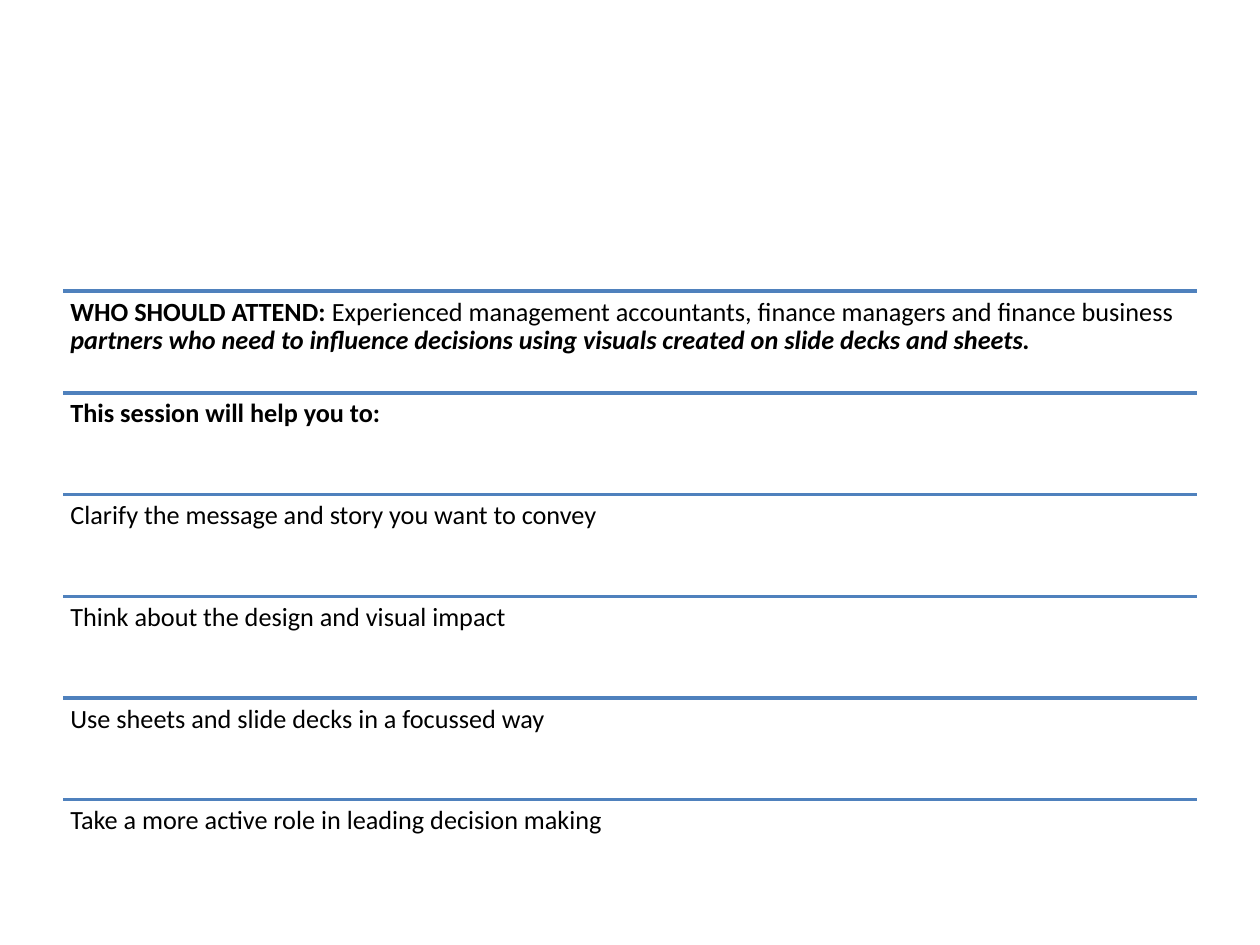
from lxml import etree
from pptx import Presentation
from pptx.dml.color import RGBColor
from pptx.enum.shapes import MSO_CONNECTOR
from pptx.oxml.ns import qn
from pptx.util import Cm, Pt

STRAIGHT = MSO_CONNECTOR.STRAIGHT
LEFT, TOP, WIDTH, STEP, INSET = 1.27, 5.87, 22.86, 2.05, 0.15


def color(code):
    return RGBColor.from_string(code)


# Each row is a list of runs: text, bold, italic
rows = [
    [("WHO SHOULD ATTEND: ", True, False),
     ("Experienced management accountants, finance managers and finance business ", False, False),
     ("partners who need to influence decisions using visuals created on slide decks and sheets.",
      True, True)],
    [("This session will help you to:", True, False)],
    [("Clarify the message and story you want to convey", False, False)],
    [("Think about the design and visual impact", False, False)],
    [("Use sheets and slide decks in a focussed way", False, False)],
    [("Take a more active role in leading decision making", False, False)],
]

prs = Presentation()
prs.slide_width, prs.slide_height = Cm(25.4), Cm(19.05)
slide = prs.slides.add_slide(prs.slide_layouts[6])

for i, runs in enumerate(rows):
    top = Cm(TOP + i * STEP)
    rule = slide.shapes.add_connector(STRAIGHT, Cm(LEFT), top, Cm(LEFT + WIDTH), top)
    rule.line.color.rgb = color("4F81BD")
    rule.line.width = Pt(2)
    etree.SubElement(rule._element.spPr, qn("a:effectLst"))

    box = slide.shapes.add_textbox(Cm(LEFT), top, Cm(WIDTH), Cm(STEP))
    frame = box.text_frame
    frame.word_wrap = True
    frame.margin_left = frame.margin_right = Cm(INSET)
    frame.margin_top = frame.margin_bottom = Cm(INSET)

    para = frame.paragraphs[0]
    para.line_spacing = 0.9
    para.font.name = "Calibri"
    para.font.size = Pt(15)
    para.font.color.rgb = color("000000")
    for text, bold, italic in runs:
        run = para.add_run()
        run.text = text
        run.font.bold = bold
        run.font.italic = italic

prs.save("out.pptx")
